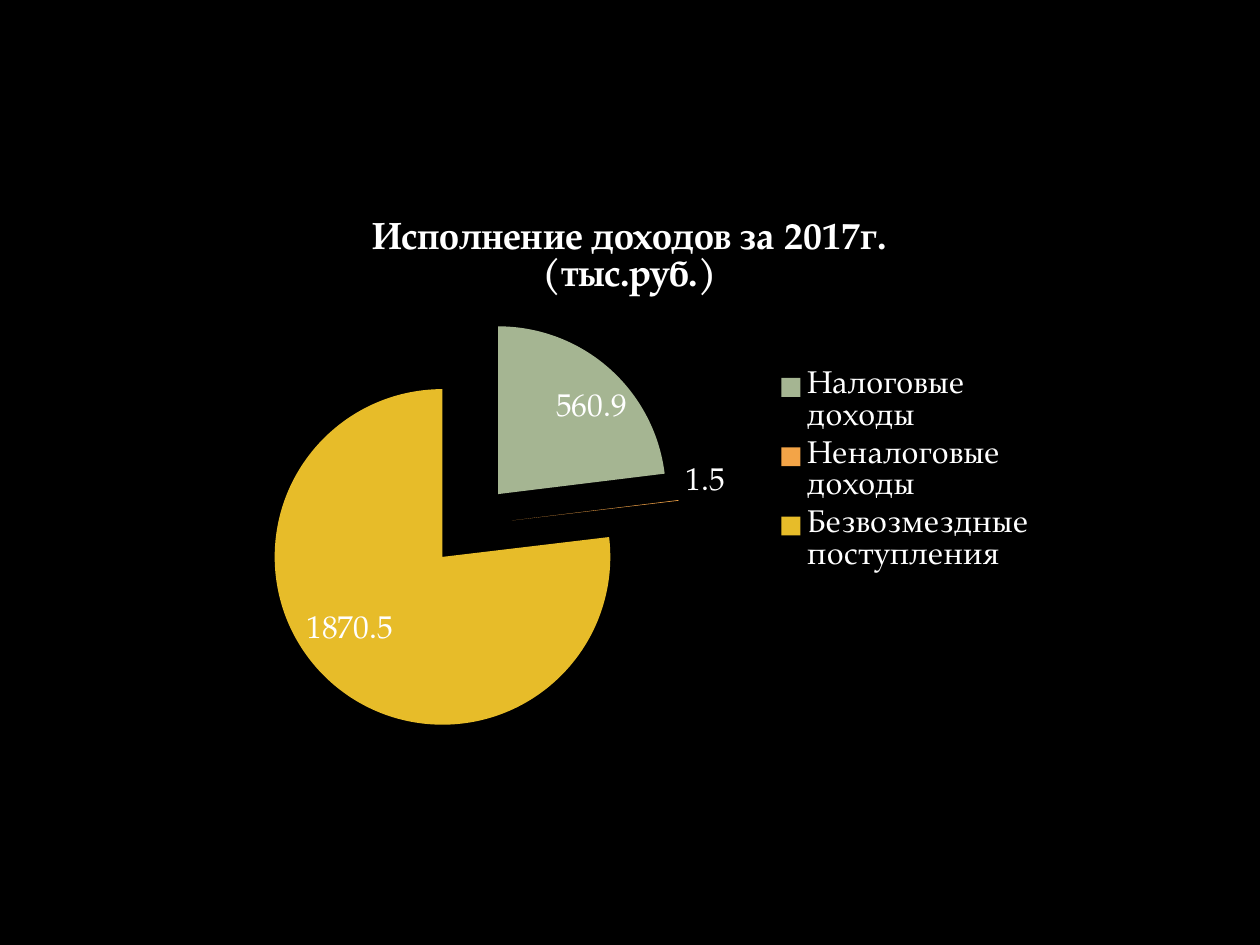
from lxml.etree import SubElement, Element
from pptx import Presentation
from pptx.chart.data import CategoryChartData
from pptx.dml.color import RGBColor
from pptx.enum.chart import XL_CHART_TYPE, XL_LABEL_POSITION, XL_LEGEND_POSITION
from pptx.oxml.ns import qn
from pptx.util import Inches, Pt

BLACK = RGBColor(0x00, 0x00, 0x00)
WHITE = RGBColor(0xFF, 0xFF, 0xFF)
SAGE = RGBColor(0xA5, 0xB5, 0x92)
ORANGE = RGBColor(0xF3, 0xA4, 0x47)
GOLD = RGBColor(0xE7, 0xBC, 0x29)

TITLE = "Исполнение доходов за 2017г. (тыс.руб.)"
INCOME = [
    ("Налоговые доходы", 560.9, SAGE),
    ("Неналоговые доходы", 1.5, ORANGE),
    ("Безвозмездные поступления", 1870.5, GOLD),
]


class Deck:
    face = "TeX Gyre Pagella"
    size = 18
    head = 21.6

    def __init__(self, wide, high):
        self.file = Presentation()
        self.file.slide_width = Inches(wide)
        self.file.slide_height = Inches(high)
        self.slide = self.file.slides.add_slide(self.file.slide_layouts[6])
        fill = self.slide.background.fill
        fill.solid()
        fill.fore_color.rgb = BLACK

    def area(self, left, top, wide, high):
        full, tall = self.file.slide_width, self.file.slide_height
        return int(left * full), int(top * tall), int(wide * full), int(high * tall)

    def style(self, font, size, bold=False):
        font.name = self.face
        font.size = Pt(size)
        font.bold = bold
        font.color.rgb = WHITE

    def title(self, chart, text):
        chart.has_title = True
        frame = chart.chart_title.text_frame
        frame.text = text
        self.style(frame.paragraphs[0].runs[0].font, self.head, True)
        chart.chart_title.include_in_layout = False

    def legend(self, chart):
        chart.has_legend = True
        chart.legend.position = XL_LEGEND_POSITION.RIGHT
        chart.legend.include_in_layout = False
        self.style(chart.legend.font, self.size)

    def labels(self, plot):
        plot.has_data_labels = True
        labels = plot.data_labels
        labels.show_value = True
        labels.show_percentage = False
        labels.number_format = "General"
        labels.number_format_is_linked = False
        labels.position = XL_LABEL_POSITION.BEST_FIT
        self.style(labels.font, self.size)
        for body in labels._element.iter(qn("a:bodyPr")):
            body.set("wrap", "none")

    def place(self, chart, left, top, wide, high):
        area = chart._chartSpace.find(".//" + qn("c:plotArea"))
        for old in area.findall(qn("c:layout")):
            area.remove(old)
        layout = Element(qn("c:layout"))
        area.insert(0, layout)
        manual = SubElement(layout, qn("c:manualLayout"))
        rules = [("layoutTarget", "inner"), ("xMode", "edge"), ("yMode", "edge"),
                 ("x", left), ("y", top), ("w", wide), ("h", high)]
        for name, value in rules:
            SubElement(manual, qn("c:" + name), val=str(value))

    def pie(self, area, inner, title, rows, burst):
        names, values, colors = zip(*rows)
        data = CategoryChartData()
        data.categories = names
        data.add_series("Series 1", values)
        chart = self.slide.shapes.add_chart(
            XL_CHART_TYPE.PIE, *self.area(*area), data).chart
        self.style(chart.font, self.size)
        self.title(chart, title)
        self.legend(chart)
        self.place(chart, *inner)
        plot = chart.plots[0]
        plot.vary_by_categories = True
        self.labels(plot)
        series = plot.series[0]
        gap = Element(qn("c:explosion"), val=str(burst))
        series._element.find(qn("c:tx")).addnext(gap)
        for spot, color in enumerate(colors):
            fill = series.points[spot].format.fill
            fill.solid()
            fill.fore_color.rgb = color


def main():
    deck = Deck(10, 7.5)
    deck.pie((1 / 6, 0.204, 2 / 3, 0.592), (0.06, 0.22, 0.5, 0.75),
             TITLE, INCOME, 25)
    deck.file.save("out.pptx")


if __name__ == "__main__":
    main()
